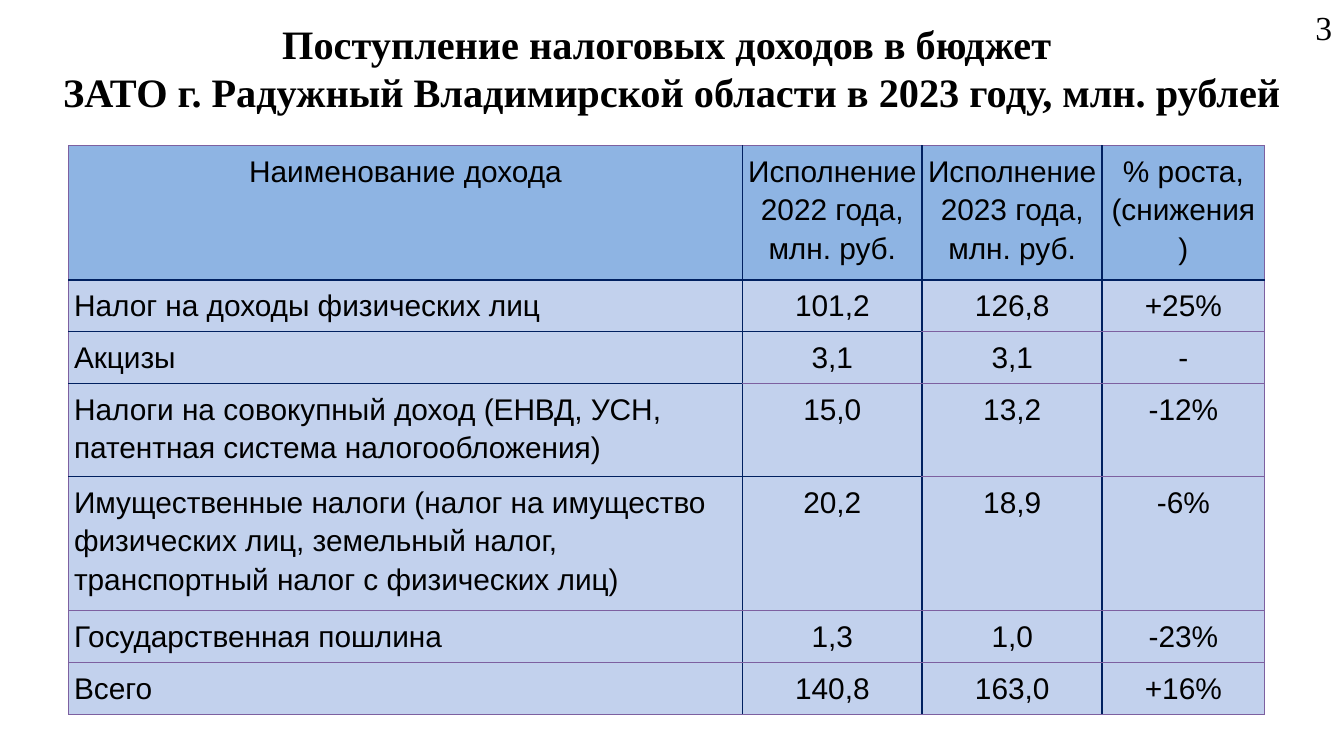
from lxml import etree
from pptx import Presentation
from pptx.dml.color import RGBColor
from pptx.enum import text
from pptx.oxml import ns
from pptx.util import Cm, Pt

THEME = {
    "ink": "000000", "header": "8EB4E3", "body": "C2D1ED",
    "navy": ("002060", 1), "purple": ("7D60A0", 0.75),
    "heading": {"name": "Times New Roman", "size": Pt(21.6), "bold": True},
    "number": {"name": "Times New Roman", "size": Pt(18), "bold": False},
    "table": {"name": "Arial", "size": Pt(16), "bold": False},
}


def write(frame, wording, style, **layout):
    frame.text = wording
    paragraph = frame.paragraphs[0]
    for key, value in layout.items():
        setattr(paragraph, key, value)
    for run in paragraph.runs:
        for key, value in THEME[style].items():
            setattr(run.font, key, value)
        run.font.color.rgb = RGBColor.from_string(THEME["ink"])


def add_border(cell, side, line):
    colour, width = THEME[line]
    properties = cell._tc.get_or_add_tcPr()
    border = etree.SubElement(properties, ns.qn(f"a:ln{side}"), w=str(Pt(width)))
    fill = etree.SubElement(border, ns.qn("a:solidFill"))
    etree.SubElement(fill, ns.qn("a:srgbClr"), val=colour)


deck = Presentation()
deck.slide_width, deck.slide_height = Cm(25.4), Cm(14.28)
slide = deck.slides.add_slide(deck.slide_layouts[5])

heading = slide.shapes.title
heading_place = {"left": Cm(0), "top": Cm(0), "width": Cm(25.4), "height": Cm(2.54)}
for key, value in heading_place.items():
    setattr(heading, key, value)
heading_format = {
    "word_wrap": True,
    "auto_size": text.MSO_AUTO_SIZE.NONE,
    "vertical_anchor": text.MSO_ANCHOR.MIDDLE,
}
for key, value in heading_format.items():
    setattr(heading.text_frame, key, value)
write(
    heading.text_frame,
    "Поступление налоговых доходов в бюджет \vЗАТО г. Радужный Владимирской области в 2023 году, млн. рублей",
    "heading",
    alignment=text.PP_ALIGN.CENTER,
)

page_number = slide.shapes.add_textbox(Cm(24.61), Cm(0), Cm(0.79), Cm(1.02))
write(page_number.text_frame, "3", "number")

incomes = [
    ("Наименование дохода", "Исполнение 2022 года, млн. руб.",
     "Исполнение 2023 года, млн. руб.", "% роста, (снижения)"),
    ("Налог на доходы физических лиц", "101,2", "126,8", "+25%"),
    ("Акцизы", "3,1", "3,1", "-"),
    ("Налоги на совокупный доход (ЕНВД, УСН, патентная система налогообложения)",
     "15,0", "13,2", "-12%"),
    ("Имущественные налоги (налог на имущество физических лиц, земельный налог, "
     "транспортный налог с физических лиц)", "20,2", "18,9", "-6%"),
    ("Государственная пошлина", "1,3", "1,0", "-23%"),
    ("Всего", "140,8", "163,0", "+16%"),
]
column_widths = [12.73, 3.4, 3.4, 3.07]
row_heights = [2.52, 0.98, 0.98, 1.74, 2.52, 0.98, 0.98]
navy_columns_per_rule = [0, 4, 2, 1, 2, 0, 0, 0]

income_table = slide.shapes.add_table(
    len(row_heights), len(column_widths), Cm(1.3), Cm(2.75),
    Cm(sum(column_widths)), Cm(sum(row_heights)),
).table
income_table.first_row = False
income_table.horz_banding = False
for column, width in zip(income_table.columns, column_widths):
    column.width = Cm(width)
for row, height in zip(income_table.rows, row_heights):
    row.height = Cm(height)

last_column = len(column_widths) - 1
for r, income in enumerate(incomes):
    for c, wording in enumerate(income):
        cell = income_table.cell(r, c)
        for side in ("left", "right", "top", "bottom"):
            setattr(cell, f"margin_{side}", Cm(0.1))
        add_border(cell, "L", "purple" if c == 0 else "navy")
        add_border(cell, "R", "purple" if c == last_column else "navy")
        for side, rule in (("T", r), ("B", r + 1)):
            add_border(cell, side, "navy" if c < navy_columns_per_rule[rule] else "purple")
        cell.fill.solid()
        cell.fill.fore_color.rgb = RGBColor.from_string(THEME["body" if r else "header"])
        left_aligned = r > 0 and c == 0
        write(
            cell.text_frame, wording, "table", line_spacing=1.15,
            alignment=text.PP_ALIGN.LEFT if left_aligned else text.PP_ALIGN.CENTER,
        )

deck.save("out.pptx")
